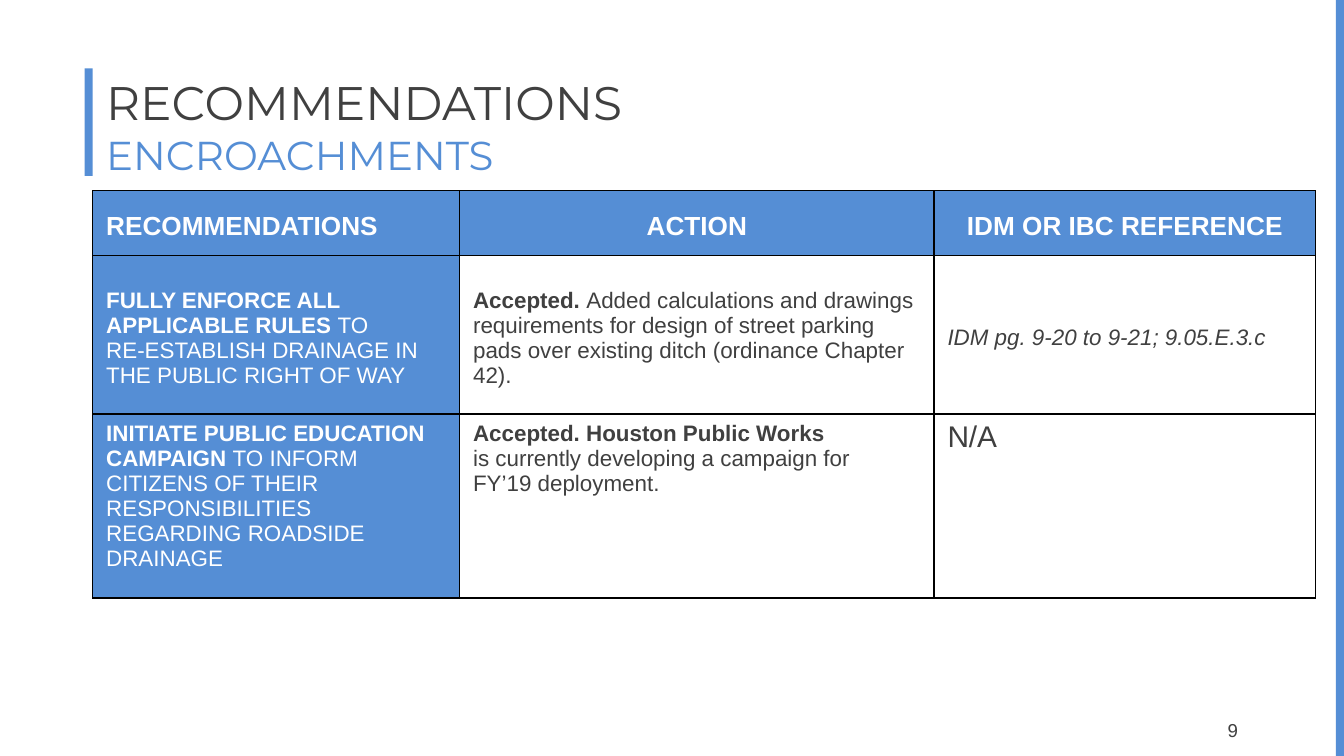
from lxml import etree
from pptx import Presentation
from pptx.dml.color import RGBColor
from pptx.enum.shapes import MSO_SHAPE
from pptx.enum.text import MSO_ANCHOR, MSO_AUTO_SIZE, PP_ALIGN
from pptx.oxml.ns import qn
from pptx.util import Inches, Pt

RECT = MSO_SHAPE.RECTANGLE
TOP, MIDDLE = MSO_ANCHOR.TOP, MSO_ANCHOR.MIDDLE
LEFT, CENTER, RIGHT = PP_ALIGN.LEFT, PP_ALIGN.CENTER, PP_ALIGN.RIGHT
BLUE, DARK, WHITE, BLACK = "558ED5", "404040", "FFFFFF", "000000"
WIDTH = 10
HEIGHT = WIDTH * 9 / 16
COLUMNS = [2.73, 3.53, 2.84]
ROWS = [0.48, 1.18, 1.37]

HEADERS = ["RECOMMENDATIONS", "ACTION", "IDM OR IBC REFERENCE"]
ENTRIES = [
    [
        [("FULLY ENFORCE ALL APPLICABLE RULES ", "b"),
         ("TO \nRE-ESTABLISH DRAINAGE IN THE PUBLIC RIGHT OF WAY", "")],
        [("Accepted. ", "b"),
         ("Added calculations and drawings requirements for design of street "
          "parking pads over existing ditch (ordinance Chapter 42).", "")],
        [("IDM pg. 9-20 to 9-21; 9.05.E.3.c", "i")],
    ],
    [
        [("INITIATE PUBLIC EDUCATION CAMPAIGN ", "b"),
         ("TO INFORM CITIZENS OF THEIR RESPONSIBILITIES REGARDING ROADSIDE DRAINAGE", "")],
        [("Accepted. Houston Public Works \n", "b"),
         ("is currently developing a campaign for \nFY’19 deployment.", "")],
        [("N/A", "")],
    ],
]


def rgb(value):
    """Turn a hex string into a colour."""
    return RGBColor.from_string(value)


def set_font(font, size, color, name="Arial"):
    """Set the size, colour and typeface of a font."""
    font.size, font.name = Pt(size), name
    font.color.rgb = rgb(color)


def add_text(p, text):
    """Add text to a paragraph, with line breaks, and return its runs."""
    runs = []
    for i, line in enumerate(text.split("\n")):
        if i:
            p.add_line_break()
        if line:
            r = p.add_run()
            r.text = line
            runs.append(r)
    return runs


def add_bar(s, left, top, width, height):
    """Draw a blue accent bar."""
    sp = s.shapes.add_shape(RECT, *map(Inches, (left, top, width, height)))
    sp.shadow.inherit = False
    sp.fill.solid()
    sp.fill.fore_color.rgb = rgb(BLUE)
    sp.line.fill.background()


def add_title(s, left, top, width, height):
    """Place the two-line title with its accent bar."""
    add_bar(s, left - 0.06, top + 0.01, 0.06, 0.8)
    sp = s.shapes.title
    sp.left, sp.top, sp.width, sp.height = map(Inches, (left, top, width, height))
    tf = sp.text_frame
    tf.auto_size, tf.vertical_anchor = MSO_AUTO_SIZE.NONE, TOP
    p = tf.paragraphs[0]
    p.alignment = LEFT
    heading, subject = add_text(p, "RECOMMENDATIONS\nENCROACHMENTS")
    set_font(heading.font, 25.2, DARK, "Montserrat")
    set_font(subject.font, 21.6, BLUE, "Montserrat")


def add_borders(cell):
    """Draw thin black lines around a cell."""
    tc_pr = cell._tc.get_or_add_tcPr()
    for i, side in enumerate(("lnL", "lnR", "lnT", "lnB")):
        ln = etree.Element(qn("a:" + side), w=str(Pt(0.75)))
        fill = etree.SubElement(ln, qn("a:solidFill"))
        etree.SubElement(fill, qn("a:srgbClr"), val=BLACK)
        tc_pr.insert(i, ln)


def fill_cell(cell, parts, size, fill, color, anchor, align=LEFT):
    """Fill and format one table cell."""
    cell.fill.solid()
    cell.fill.fore_color.rgb = rgb(fill)
    add_borders(cell)
    cell.vertical_anchor = anchor
    cell.margin_left = cell.margin_right = Inches(0.1)
    cell.margin_top = Inches(0.1 if anchor == MIDDLE else 0.05)
    cell.margin_bottom = Inches(0.05)
    p = cell.text_frame.paragraphs[0]
    p.alignment = align
    set_font(p.font, size, color)
    for text, style in parts:
        for r in add_text(p, text):
            r.font.bold, r.font.italic = style == "b", style == "i"


def add_recommendations(s, left, top):
    """Place the table of recommendations."""
    frame = s.shapes.add_table(len(ROWS), len(COLUMNS), Inches(left), Inches(top),
                               Inches(sum(COLUMNS)), Inches(sum(ROWS)))
    table = frame.table
    for column, width in zip(table.columns, COLUMNS):
        column.width = Inches(width)
    for row, height in zip(table.rows, ROWS):
        row.height = Inches(height)
    for c, text in enumerate(HEADERS):
        fill_cell(table.cell(0, c), [(text, "b")], 14, BLUE, WHITE, MIDDLE,
                  CENTER if c else LEFT)
    for r, entry in enumerate(ENTRIES, 1):
        for c, parts in enumerate(entry):
            fill, color = (WHITE, DARK) if c else (BLUE, WHITE)
            size = 16 if parts[0][0] == "N/A" else 12
            fill_cell(table.cell(r, c), parts, size, fill, color,
                      MIDDLE if r == 1 else TOP)


def add_page_number(s, left, top, width, height):
    """Place the page number."""
    tf = s.shapes.add_textbox(*map(Inches, (left, top, width, height))).text_frame
    tf.word_wrap, tf.vertical_anchor = True, MIDDLE
    tf.margin_top = tf.margin_bottom = 0
    p = tf.paragraphs[0]
    p.text, p.alignment = "9", RIGHT
    set_font(p.font, 10, DARK)


def main():
    """Build and save the slide."""
    prs = Presentation()
    prs.slide_width, prs.slide_height = Inches(WIDTH), Inches(HEIGHT)
    s = prs.slides.add_slide(prs.slide_layouts[5])
    add_bar(s, WIDTH - 0.06, 0, 0.06, HEIGHT)
    add_title(s, 0.69, 0.5, 8.62, 0.79)
    add_recommendations(s, 0.69, 1.42)
    add_page_number(s, 8.88, 5.36, 0.43, 0.14)
    prs.save("out.pptx")


if __name__ == "__main__":
    main()
